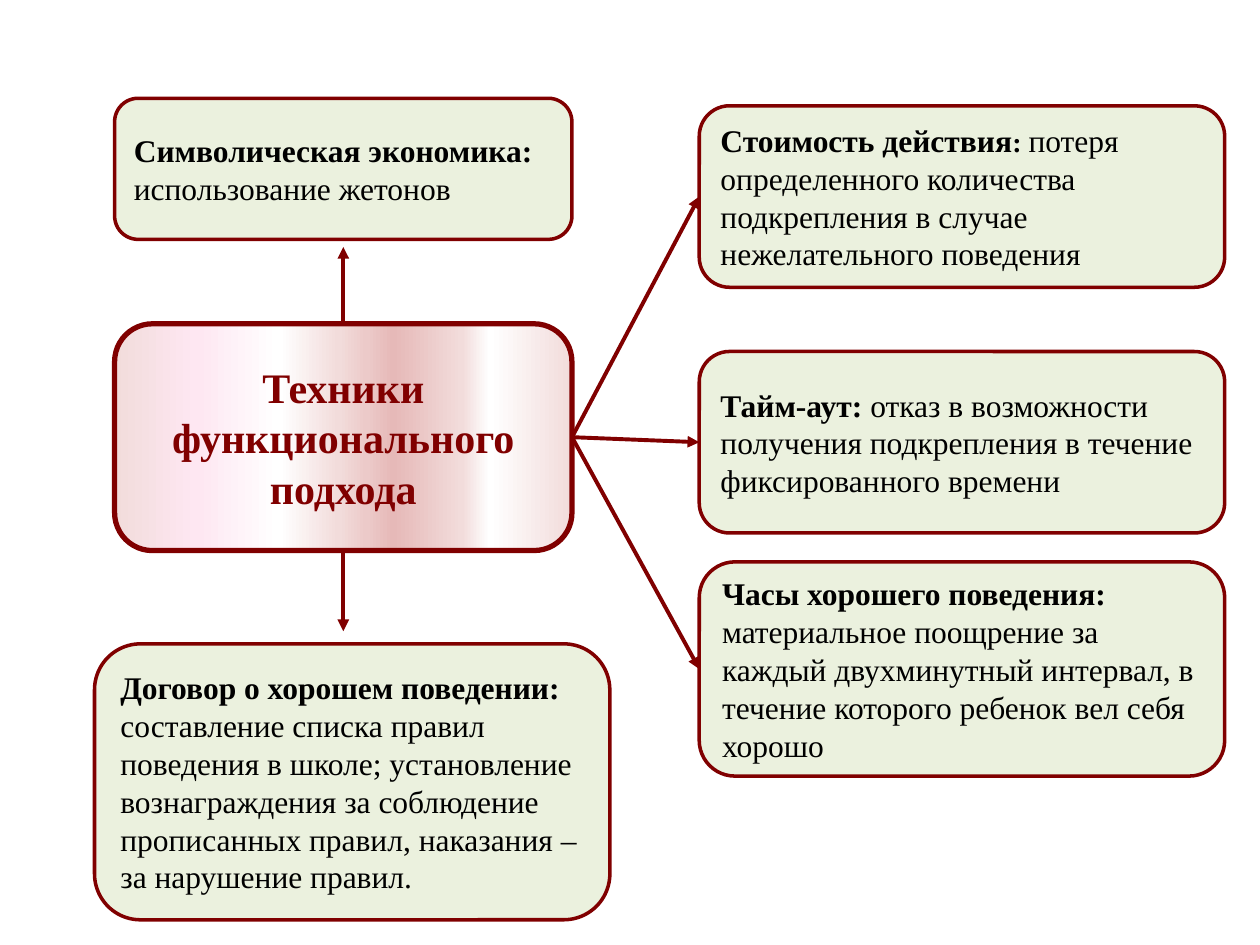
from lxml import etree
from pptx import Presentation
from pptx.dml.color import RGBColor
from pptx.enum.shapes import MSO_CONNECTOR, MSO_SHAPE
from pptx.enum.text import MSO_ANCHOR, PP_ALIGN
from pptx.oxml.ns import qn
from pptx.util import Inches, Pt

ROUNDED = MSO_SHAPE.ROUNDED_RECTANGLE
STRAIGHT = MSO_CONNECTOR.STRAIGHT
MIDDLE = MSO_ANCHOR.MIDDLE
LEFT, CENTER = PP_ALIGN.LEFT, PP_ALIGN.CENTER
TOP_SIDE, LEFT_SIDE, BOTTOM_SIDE, RIGHT_SIDE = range(4)

MAROON = RGBColor(0x80, 0x00, 0x00)
BLACK = RGBColor(0x00, 0x00, 0x00)
PALE_GREEN = RGBColor(0xEB, 0xF1, 0xDE)
ROSE = RGBColor(0xF2, 0xDC, 0xDB)
PINK = RGBColor(0xFE, 0xE7, 0xF2)
WHITE = RGBColor(0xFF, 0xFF, 0xFF)
MID_ROSE = RGBColor(0xEC, 0xCA, 0xC9)
DEEP_ROSE = RGBColor(0xE6, 0xB9, 0xB8)

# Gradient stops: position in percent, colour
SHEEN = [(0, ROSE), (18, PINK), (36, WHITE), (49, ROSE), (55, MID_ROSE),
         (61, DEEP_ROSE), (76, ROSE), (82, WHITE), (100, ROSE)]


def add_text(para, text, size=18, bold=False, color=BLACK, font="Times New Roman"):
    span = para.add_run()
    span.text = text
    span.font.name = font
    span.font.size = Pt(size)
    span.font.bold = bold
    span.font.color.rgb = color


class Diagram:
    """Holds the style and the current slide."""

    line_color = MAROON
    box_fill = PALE_GREEN

    def __init__(self, page):
        self.page = page

    def box(self, left, top, width, height, line_width=2, align=LEFT):
        box = self.page.shapes.add_shape(
            ROUNDED, Inches(left), Inches(top), Inches(width), Inches(height))
        box.shadow.inherit = False
        box.fill.solid()
        box.fill.fore_color.rgb = self.box_fill
        box.line.color.rgb = self.line_color
        box.line.width = Pt(line_width)
        box.text_frame.word_wrap = True
        box.text_frame.vertical_anchor = MIDDLE
        box.text_frame.paragraphs[0].alignment = align
        return box

    def technique(self, place, name, description, colon_size=18):
        box = self.box(*place)
        para = box.text_frame.paragraphs[0]
        add_text(para, name, bold=True)
        add_text(para, ": ", size=colon_size, bold=True)
        add_text(para, description)
        return box

    def topic(self, place, text, stops):
        box = self.box(*place, line_width=3, align=CENTER)
        add_text(box.text_frame.paragraphs[0], text, size=24, bold=True, color=MAROON)
        box.fill.gradient()
        box.fill.gradient_angle = 0
        stop_list = box._element.spPr.find(qn("a:gradFill")).find(qn("a:gsLst"))
        for old_stop in list(stop_list):
            stop_list.remove(old_stop)
        for position, color in stops:
            stop = etree.SubElement(stop_list, qn("a:gs"), pos=str(position * 1000))
            etree.SubElement(stop, qn("a:srgbClr"), val=str(color))
        return box

    def arrow(self, start_box, side, end_box=None, end_y=0):
        """Arrow to the left side of end_box, or straight up or down to end_y."""
        middle = start_box.left + start_box.width // 2
        arrow = self.page.shapes.add_connector(
            STRAIGHT, middle, start_box.top, middle, Inches(end_y))
        arrow.begin_connect(start_box, side)
        if end_box is not None:
            arrow.end_connect(end_box, LEFT_SIDE)
        arrow.line.color.rgb = self.line_color
        arrow.line.width = Pt(2.25)
        etree.SubElement(arrow.line._get_or_add_ln(), qn("a:tailEnd"), type="triangle")
        etree.SubElement(arrow._element.spPr, qn("a:effectLst"))


def main():
    deck = Presentation()
    deck.slide_width, deck.slide_height = Inches(10), Inches(7.5)
    diagram = Diagram(deck.slides.add_slide(deck.slide_layouts[6]))

    # Central topic
    topic = diagram.topic((0.91, 2.57, 3.63, 1.8),
                          "Техники функционального подхода", SHEEN)

    # Techniques below and above the topic
    diagram.technique(
        (0.75, 5.11, 4.09, 2.19), "Договор о хорошем поведении",
        "составление списка правил поведения в школе; установление вознаграждения "
        "за соблюдение прописанных правил, наказания – за нарушение правил.")
    diagram.technique((0.91, 0.78, 3.63, 1.12), "Символическая экономика",
                      "использование жетонов")

    # Techniques in the right column
    column_left, column_width = 5.55, 4.17
    right_column = [
        (0.84, 1.44, "Стоимость действия",
         "потеря определенного количества подкрепления в случае "
         "нежелательного поведения", 16),
        (2.79, 1.44, "Тайм-аут",
         "отказ в возможности получения подкрепления в течение "
         "фиксированного времени", 18),
        (4.46, 1.7, "Часы хорошего поведения",
         "материальное поощрение за каждый двухминутный интервал, "
         "в течение которого ребенок вел себя хорошо", 18),
    ]
    targets = [
        diagram.technique((column_left, top, column_width, height),
                          name, description, colon_size)
        for top, height, name, description, colon_size in right_column]

    # Arrows from the topic
    for target in targets:
        diagram.arrow(topic, RIGHT_SIDE, end_box=target)
    diagram.arrow(topic, TOP_SIDE, end_y=1.96)
    diagram.arrow(topic, BOTTOM_SIDE, end_y=5.01)

    deck.save("out.pptx")


if __name__ == "__main__":
    main()
